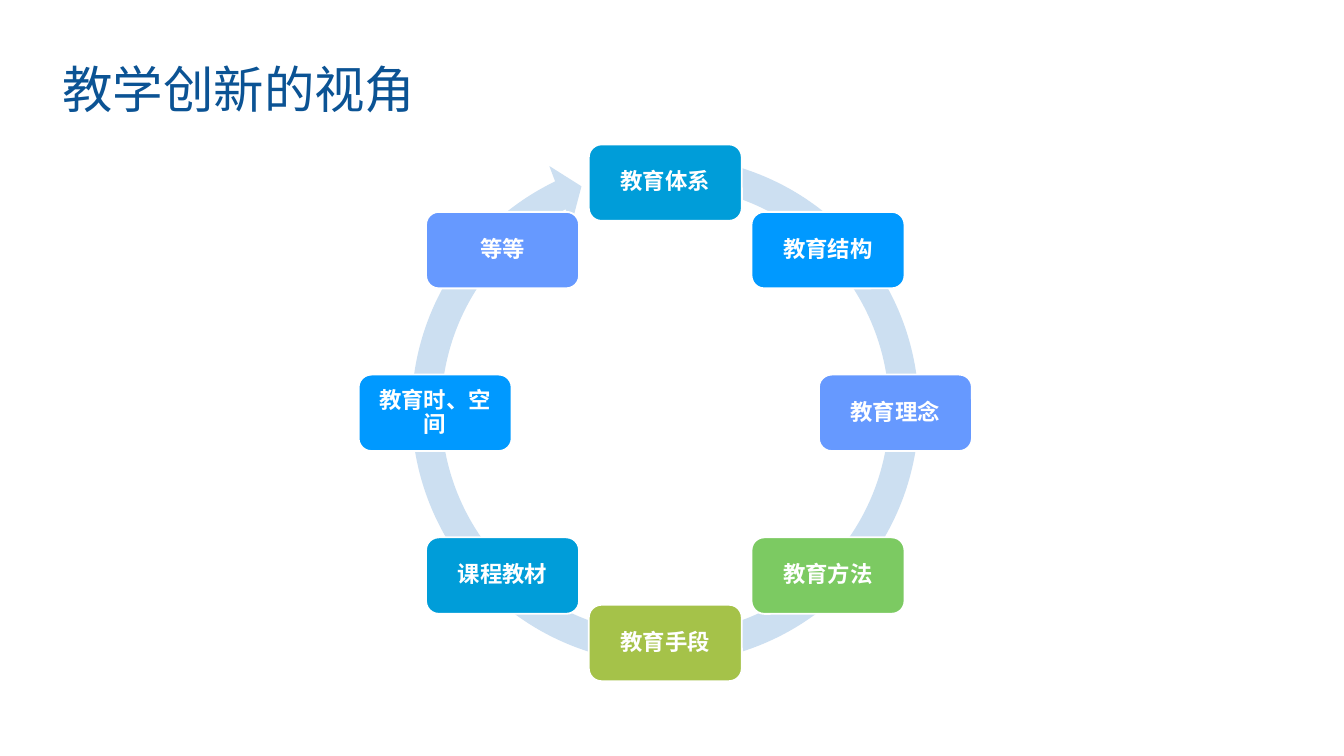
from dataclasses import dataclass
from math import cos, radians, sin

from pptx import Presentation
from pptx.dml.color import RGBColor
from pptx.enum.shapes import MSO_SHAPE
from pptx.enum.text import MSO_ANCHOR, PP_ALIGN
from pptx.util import Pt

CIRCULAR_ARROW = MSO_SHAPE.CIRCULAR_ARROW
ROUNDED_RECTANGLE = MSO_SHAPE.ROUNDED_RECTANGLE
MIDDLE = MSO_ANCHOR.MIDDLE
CENTER = PP_ALIGN.CENTER


@dataclass(frozen=True)
class Theme:
    font: str = "Arial"
    title_size: float = 27
    node_size: float = 12
    title: str = "0B5394"
    ring: str = "CCDFF1"
    white: str = "FFFFFF"
    cyan: str = "009DD9"
    blue: str = "0099FF"
    periwinkle: str = "6699FF"
    green: str = "7CCA62"
    olive: str = "A5C249"


THEME = Theme()

SLIDE_WIDTH, SLIDE_HEIGHT = 720, 405
CENTER_X, CENTER_Y = 356.4, 221.2
CYCLE_RADIUS = 123.3
NODE_WIDTH, NODE_HEIGHT = 82, 41
RING_SIZE, RING_CENTER_Y = 289.4, 219.6
RING_ADJUSTMENTS = (0.055, 3.307, 146.367, 168.814, 0.058)

PERSPECTIVES = [
    ("教育体系", THEME.cyan),
    ("教育结构", THEME.blue),
    ("教育理念", THEME.periwinkle),
    ("教育方法", THEME.green),
    ("教育手段", THEME.olive),
    ("课程教材", THEME.cyan),
    ("教育时、空间", THEME.blue),
    ("等等", THEME.periwinkle),
]


def set_text(shape, text, size, color, margin_x, margin_y, bold=False):
    frame = shape.text_frame
    frame.word_wrap = True
    frame.vertical_anchor = MIDDLE
    frame.margin_left = frame.margin_right = Pt(margin_x)
    frame.margin_top = frame.margin_bottom = Pt(margin_y)
    paragraph = frame.paragraphs[0]
    paragraph.text = text
    paragraph.font.name = THEME.font
    paragraph.font.size = Pt(size)
    paragraph.font.bold = bold
    paragraph.font.color.rgb = RGBColor.from_string(color)
    return paragraph


def add_filled_shape(slide, kind, center_x, center_y, width, height, color):
    shape = slide.shapes.add_shape(
        kind, Pt(center_x - width / 2), Pt(center_y - height / 2), Pt(width), Pt(height)
    )
    shape.shadow.inherit = False
    shape.fill.solid()
    shape.fill.fore_color.rgb = RGBColor.from_string(color)
    shape.line.fill.background()
    return shape


def add_title(slide, text):
    box = slide.shapes.add_textbox(Pt(28.1), Pt(26.6), Pt(656.6), Pt(41.8))
    set_text(box, text, THEME.title_size, THEME.title, 5.4, 2.7)


def add_ring(slide):
    ring = add_filled_shape(
        slide, CIRCULAR_ARROW, CENTER_X, RING_CENTER_Y, RING_SIZE, RING_SIZE, THEME.ring
    )
    for index, value in enumerate(RING_ADJUSTMENTS):
        ring.adjustments[index] = value


def add_node(slide, text, color, angle):
    center_x = CENTER_X + CYCLE_RADIUS * sin(angle)
    center_y = CENTER_Y - CYCLE_RADIUS * cos(angle)
    node = add_filled_shape(
        slide, ROUNDED_RECTANGLE, center_x, center_y, NODE_WIDTH, NODE_HEIGHT, color
    )
    node.line.color.rgb = RGBColor.from_string(THEME.white)
    node.line.width = Pt(1)
    paragraph = set_text(node, text, THEME.node_size, THEME.white, 3.6, 3.6, bold=True)
    paragraph.alignment = CENTER
    paragraph.line_spacing = 0.9
    paragraph.space_after = Pt(4.2)


def main():
    presentation = Presentation()
    presentation.slide_width = Pt(SLIDE_WIDTH)
    presentation.slide_height = Pt(SLIDE_HEIGHT)
    slide = presentation.slides.add_slide(presentation.slide_layouts[6])
    add_title(slide, "教学创新的视角")
    add_ring(slide)
    step = 360 / len(PERSPECTIVES)
    for index, (text, color) in enumerate(PERSPECTIVES):
        add_node(slide, text, color, radians(index * step))
    presentation.save("out.pptx")


if __name__ == "__main__":
    main()
